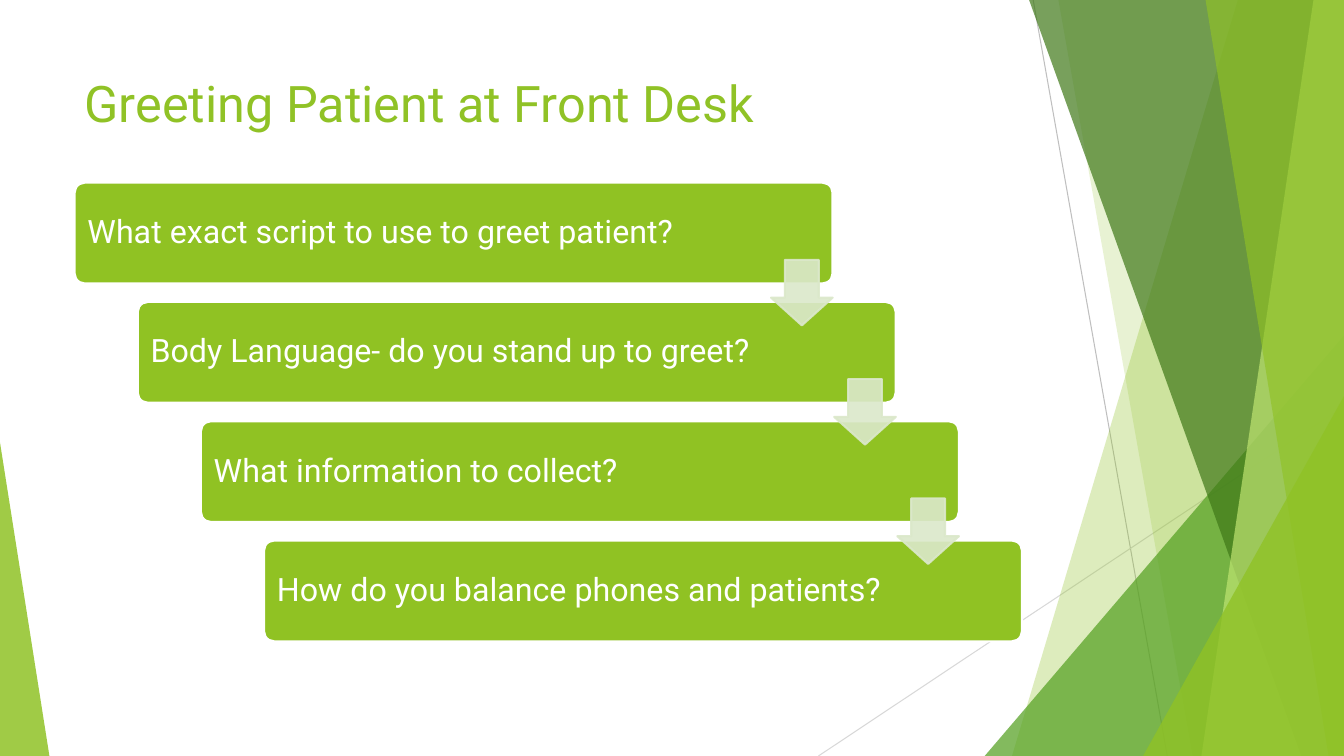
from dataclasses import dataclass

import pptx
import pptx.dml.color
import pptx.enum.shapes
import pptx.enum.text
import pptx.oxml.ns
import pptx.util
from lxml import etree

Pt = pptx.util.Pt
qn = pptx.oxml.ns.qn
Preset = pptx.enum.shapes.MSO_SHAPE
Anchor = pptx.enum.text.MSO_ANCHOR

WIDTH, HEIGHT = 960, 540
FONT = "Roboto"
GREEN, STEP_GREEN, WHITE, ARROW_GREEN = "90C226", "90C223", "FFFFFF", "DBE8CA"

QUESTIONS = (
    "What exact script to use to greet patient?",
    "Body Language- do you stand up to greet?",
    "What information to collect?",
    "How do you balance phones and patients?",
)
STEP_RIGHT, STEP_DOWN = 45.1, 85.2


@dataclass(frozen=True)
class Box:
    left: float
    top: float
    width: float
    height: float

    def moved(self, steps: int) -> "Box":
        return Box(self.left + steps * STEP_RIGHT, self.top + steps * STEP_DOWN,
                   self.width, self.height)

    def lengths(self) -> tuple:
        return Pt(self.left), Pt(self.top), Pt(self.width), Pt(self.height)


@dataclass(frozen=True)
class Ray:
    start: tuple[float, float]
    end: tuple[float, float]
    color: str


@dataclass(frozen=True)
class Facet:
    """A full-height band with a slanted left side, reaching the right slide edge."""
    top_left: float
    bottom_left: float
    color: str
    opacity: int


@dataclass(frozen=True)
class Wedge:
    """A right-angled triangle; apex is 0 at its left and 1 at its right."""
    box: Box
    apex: int
    color: str
    opacity: int


TITLE_BOX = Box(53.3, 48.2, 676.8, 77)
FIRST_STEP = Box(53.3, 130.5, 541.4, 72)
FIRST_ARROW = Box(550.8, 185.6, 44, 46.8)

RAYS = (
    Ray((738, 0), (833.8, HEIGHT), "BFBFBF"),
    Ray((WIDTH, 290.2), (584.6, HEIGHT), "D8D8D8"),
)
DECORATION = (
    Facet(884.2, 722.9, GREEN, 30),
    Facet(756, 851.8, GREEN, 20),
    Wedge(Box(703.4, 239.8, 256.6, 300.2), 1, "54A021", 72),
    Facet(735.1, 929.5, "3F7818", 70),
    Facet(938.2, 858.2, "BFE471", 70),
    Facet(861.1, 949, GREEN, 65),
    Wedge(Box(816.5, 283, 143.5, 257), 1, GREEN, 80),
    Wedge(Box(0, 316.1, 35.3, 223.9), 0, GREEN, 85),
)


def rgb(color: str) -> pptx.dml.color.RGBColor:
    return pptx.dml.color.RGBColor.from_string(color)


def paint(shape, fill: str, line: str | None = None, opacity: int = 100) -> None:
    shape.shadow.inherit = False
    shape.fill.solid()
    shape.fill.fore_color.rgb = rgb(fill)
    if line:
        shape.line.color.rgb = rgb(line)
        shape.line.width = Pt(1.5)
    else:
        shape.line.fill.background()
    if opacity < 100:
        for color in shape.element.spPr.iter(qn("a:srgbClr")):
            etree.SubElement(color, qn("a:alpha"), val=str(opacity * 1000))


def write(shape, text: str, size: float, color: str, anchor, margin: float,
          line_spacing: float = 1.0) -> None:
    frame = shape.text_frame
    frame.text = text
    frame.word_wrap = True
    frame.vertical_anchor = anchor
    frame.margin_left = frame.margin_right = Pt(7.2)
    frame.margin_top = frame.margin_bottom = Pt(margin)
    paragraph = frame.paragraphs[0]
    paragraph.alignment = pptx.enum.text.PP_ALIGN.LEFT
    paragraph.line_spacing = line_spacing
    font = paragraph.runs[0].font
    font.name, font.size, font.color.rgb = FONT, Pt(size), rgb(color)


def draw_ray(slide, ray: Ray) -> None:
    connector = slide.shapes.add_connector(
        pptx.enum.shapes.MSO_CONNECTOR.STRAIGHT, *map(Pt, ray.start + ray.end))
    connector.line.color.rgb = rgb(ray.color)
    connector.line.width = Pt(0.75)
    etree.SubElement(connector.element.spPr, qn("a:effectLst"))


def draw_decoration(slide, item: Facet | Wedge) -> None:
    if isinstance(item, Facet):
        builder = slide.shapes.build_freeform(Pt(item.top_left), 0)
        corners = ((WIDTH, 0), (WIDTH, HEIGHT), (item.bottom_left, HEIGHT))
        builder.add_line_segments([(Pt(x), Pt(y)) for x, y in corners])
        shape = builder.convert_to_shape()
    else:
        shape = slide.shapes.add_shape(Preset.ISOSCELES_TRIANGLE, *item.box.lengths())
        shape.adjustments[0] = item.apex
    paint(shape, item.color, opacity=item.opacity)


def draw_step(slide, box: Box, question: str) -> None:
    step = slide.shapes.add_shape(Preset.ROUNDED_RECTANGLE, *box.lengths())
    step.adjustments[0] = 0.1
    paint(step, STEP_GREEN, WHITE)
    write(step, question, 23, WHITE, Anchor.MIDDLE, 7.2, 0.9)


def draw_arrow(slide, box: Box) -> None:
    arrow = slide.shapes.add_shape(Preset.DOWN_ARROW, *box.lengths())
    arrow.adjustments[0] = 0.55
    arrow.adjustments[1] = 0.45
    paint(arrow, ARROW_GREEN, ARROW_GREEN, 90)


def main() -> None:
    presentation = pptx.Presentation()
    presentation.slide_width, presentation.slide_height = Pt(WIDTH), Pt(HEIGHT)
    slide = presentation.slides.add_slide(presentation.slide_layouts[6])

    for ray in RAYS:
        draw_ray(slide, ray)
    for item in DECORATION:
        draw_decoration(slide, item)

    title = slide.shapes.add_textbox(*TITLE_BOX.lengths())
    write(title, "Greeting Patient at Front Desk", 36, GREEN, Anchor.TOP, 3.6)

    for index, question in enumerate(QUESTIONS):
        draw_step(slide, FIRST_STEP.moved(index), question)
    for index in range(len(QUESTIONS) - 1):
        draw_arrow(slide, FIRST_ARROW.moved(index))

    presentation.save("out.pptx")


if __name__ == "__main__":
    main()
